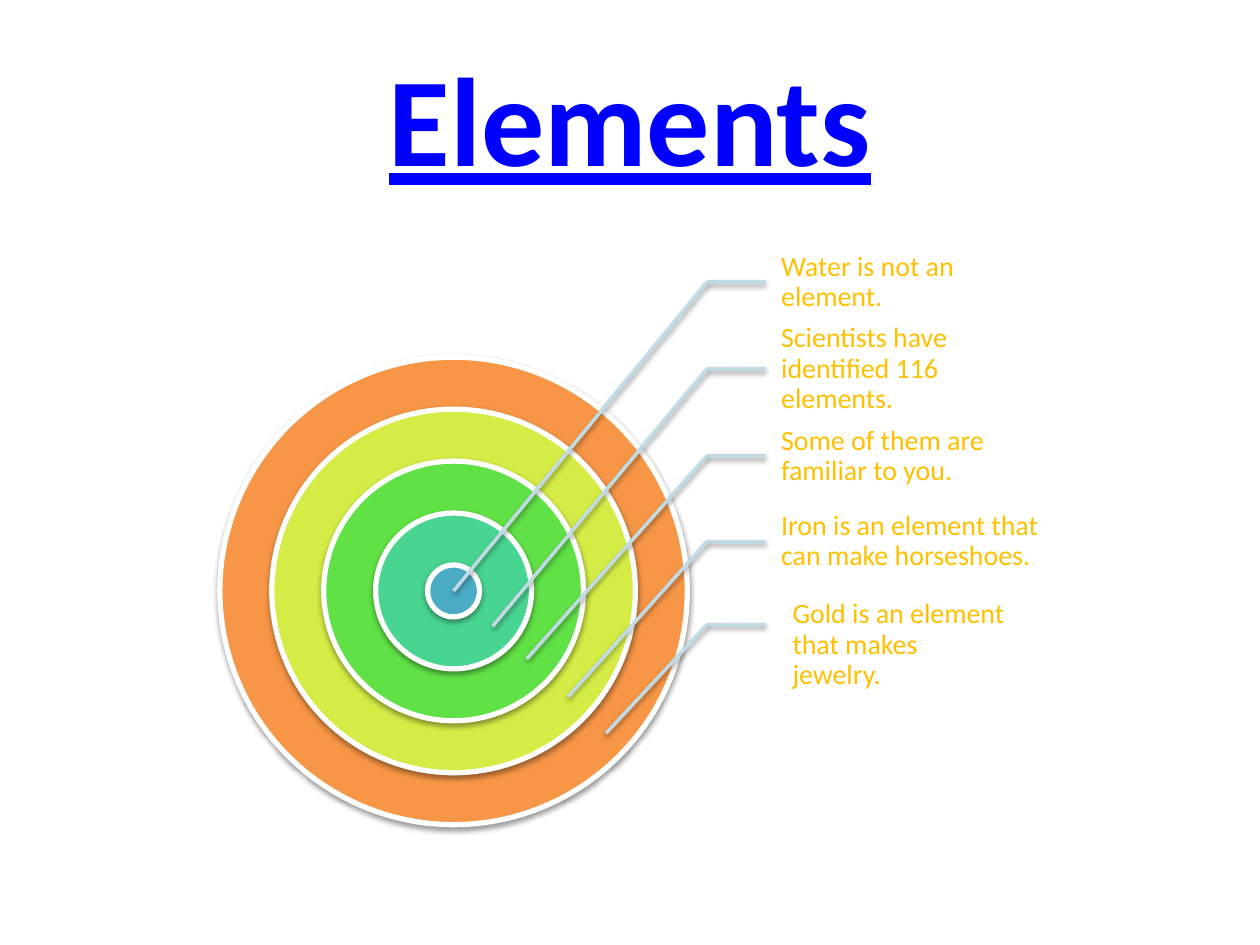
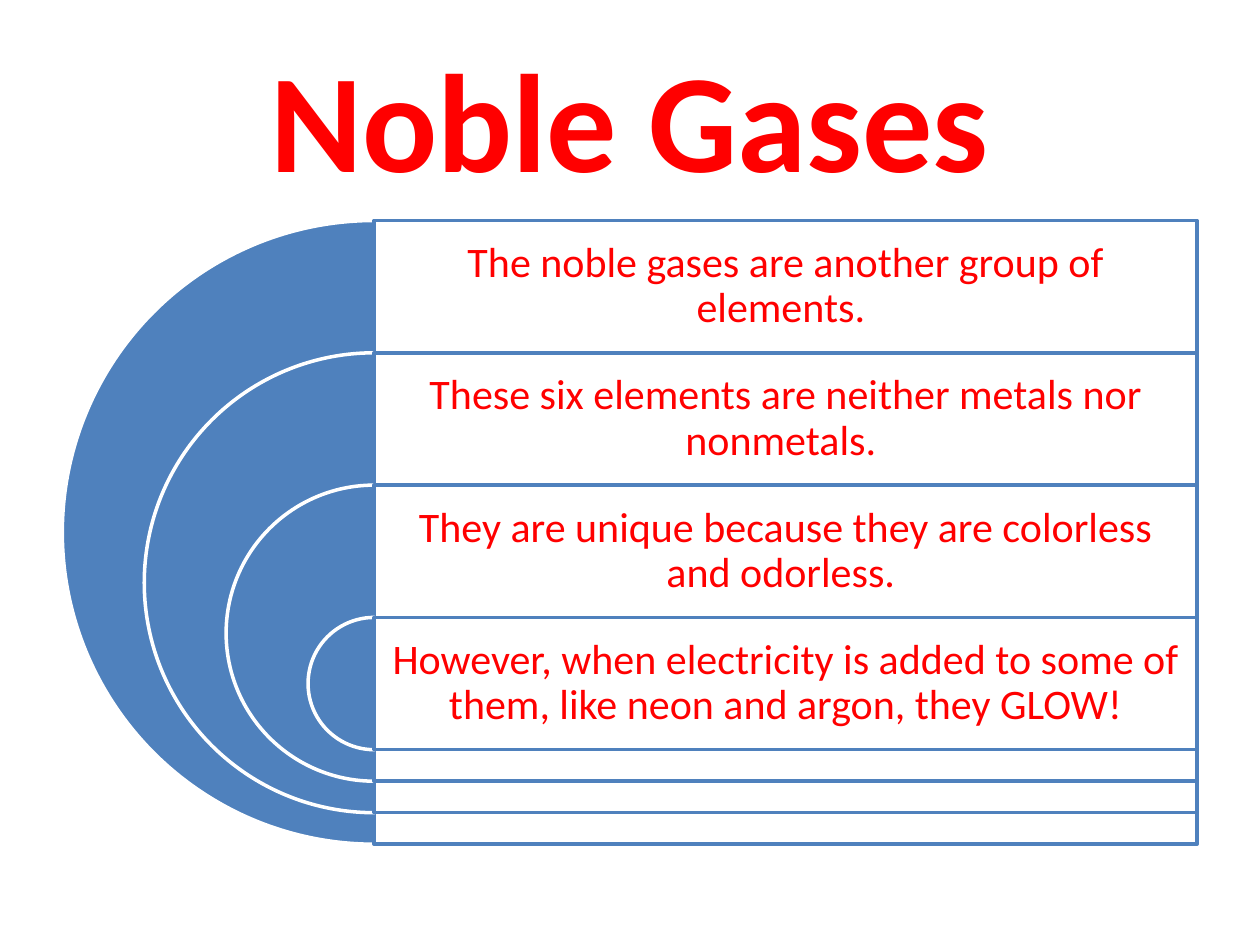
from dataclasses import dataclass

from lxml.etree import SubElement
from pptx import Presentation
from pptx.dml.color import RGBColor
from pptx.enum.shapes import MSO_CONNECTOR, MSO_SHAPE
from pptx.enum.text import MSO_ANCHOR, MSO_AUTO_SIZE, PP_ALIGN
from pptx.oxml.ns import qn
from pptx.util import Inches, Pt

ELEMENTS = [
    {"text": "Water is not an element.", "ring": "F79646",
     "elbow": 2.24, "tip": (3.6, 4.69), "box": (6.08, 1.91, 1.86, 0.66)},
    {"text": "Scientists have identified 116 elements.", "ring": "D5EC46",
     "elbow": 2.93, "tip": (3.91, 4.97), "box": (6.08, 2.6, 1.86, 0.66)},
    {"text": "Some of them are familiar to you.", "ring": "60E146",
     "elbow": 3.62, "tip": (4.18, 5.23), "box": (6.08, 3.29, 1.86, 0.66)},
    {"text": "Iron is an element that can make horseshoes.", "ring": "48D491",
     "elbow": 4.3, "tip": (4.51, 5.53), "box": (6.08, 4, 2.5, 0.6)},
    {"text": "Gold is an element that makes jewelry.", "ring": "4BACC6",
     "elbow": 4.96, "tip": (4.81, 5.82), "box": (6.17, 4.83, 1.86, 0.58)},
]

NOBLE_GASES = [
    "The noble gases are another group of elements. ",
    "These six elements are neither metals nor nonmetals. ",
    "They are unique because they are colorless and odorless. ",
    "However, when electricity is added to some of them, like neon and argon, they GLOW!",
]


@dataclass(frozen=True)
class Theme:
    font: str = "Calibri"
    white: str = "FFFFFF"
    blue: str = "0000FF"
    red: str = "FF0000"
    gold: str = "FFC000"
    leader: str = "C1DBE5"
    arc: str = "4F81BD"
    elements_title: int = 72
    gases_title: int = 80
    label_size: int = 16
    row_size: int = 24
    ring_line: int = 3
    thin_line: int = 2


THEME = Theme()
SLIDE_SIZE = (10, 7.5)
TITLE_BOX = (0.5, 0.3, 9, 1.25)

RING_CENTER = (3.6, 4.69)
RING_DIAMETER = 3.71
LEADER_ELBOW, LEADER_END = 5.61, 6.08
LABEL_INSETS = (0.12, 0.02, 0.02, 0.02)

ARC_CENTER, ARC_TOP, ARC_DIAMETER = 2.97, 1.75, 4.95
ROW_WIDTH, ROW_HEIGHT, ARC_STEP = 6.53, 1.05, 1.3
ROW_INSETS = (0.1, 0.1, 0.1, 0.1)


def inches(values):
    return [Inches(value) for value in values]


def set_shadow(shape, visible):
    effects = SubElement(shape._element.spPr, qn("a:effectLst"))
    if visible:
        shadow = SubElement(effects, qn("a:outerShdw"), blurRad="40000",
                            dist="20000", dir="5400000", rotWithShape="0")
        color = SubElement(shadow, qn("a:srgbClr"), val="000000")
        SubElement(color, qn("a:alpha"), val="38000")


def set_line(shape, color, width):
    shape.line.color.rgb = RGBColor.from_string(color)
    shape.line.width = Pt(width)


def add_shape(slide, kind, box, fill, line, width, shadow=False, opacity=100):
    shape = slide.shapes.add_shape(kind, *inches(box))
    shape.fill.solid()
    shape.fill.fore_color.rgb = RGBColor.from_string(fill)
    if opacity < 100:
        color = shape._element.spPr.find(qn("a:solidFill"))[0]
        SubElement(color, qn("a:alpha"), val=str(opacity * 1000))
    set_line(shape, line, width)
    set_shadow(shape, shadow)
    return shape


def add_leader(slide, start, end):
    connector = slide.shapes.add_connector(
        MSO_CONNECTOR.STRAIGHT, *inches(start + end))
    set_line(connector, THEME.leader, THEME.thin_line)
    set_shadow(connector, True)


def write(frame, text, size, color, align, bold=None, underline=None):
    frame.word_wrap = True
    frame.auto_size = MSO_AUTO_SIZE.NONE
    frame.vertical_anchor = MSO_ANCHOR.MIDDLE
    paragraph = frame.paragraphs[0]
    paragraph.alignment = align
    run = paragraph.add_run()
    run.text = text
    run.font.name = THEME.font
    run.font.size = Pt(size)
    run.font.color.rgb = RGBColor.from_string(color)
    run.font.bold = bold
    run.font.underline = underline
    return paragraph


def add_text(slide, box, insets, text, size, color, align):
    frame = slide.shapes.add_textbox(*inches(box)).text_frame
    (frame.margin_left, frame.margin_top,
     frame.margin_right, frame.margin_bottom) = inches(insets)
    write(frame, text, size, color, align).line_spacing = 0.9


def add_titled_slide(presentation, text, size, color, underline=None):
    slide = presentation.slides.add_slide(presentation.slide_layouts[5])
    title = slide.shapes.title
    title.left, title.top, title.width, title.height = inches(TITLE_BOX)
    write(title.text_frame, text, size, color, PP_ALIGN.CENTER, True, underline)
    return slide


def build_elements(presentation):
    slide = add_titled_slide(presentation, "Elements", THEME.elements_title,
                             THEME.blue, True)
    center_x, center_y = RING_CENTER
    bands = 2 * len(ELEMENTS) - 1
    for index, element in enumerate(ELEMENTS):
        diameter = RING_DIAMETER * (bands - 2 * index) / bands
        box = (center_x - diameter / 2, center_y - diameter / 2, diameter, diameter)
        add_shape(slide, MSO_SHAPE.OVAL, box, element["ring"], THEME.white,
                  THEME.ring_line, shadow=True)
    for element in ELEMENTS:
        add_text(slide, element["box"], LABEL_INSETS, element["text"],
                 THEME.label_size, THEME.gold, PP_ALIGN.LEFT)
        elbow = (LEADER_ELBOW, element["elbow"])
        add_leader(slide, elbow, (LEADER_END, element["elbow"]))
        add_leader(slide, elbow, element["tip"])


def build_noble_gases(presentation):
    slide = add_titled_slide(presentation, "Noble Gases", THEME.gases_title, THEME.red)
    for index, text in enumerate(NOBLE_GASES):
        top = ARC_TOP + index * ROW_HEIGHT
        diameter = ARC_DIAMETER - index * ARC_STEP
        arc = add_shape(slide, MSO_SHAPE.PIE,
                        (ARC_CENTER - diameter / 2, top, diameter, diameter),
                        THEME.arc, THEME.white, THEME.thin_line)
        arc.adjustments[0], arc.adjustments[1] = 54, 162
        add_shape(slide, MSO_SHAPE.RECTANGLE, (ARC_CENTER, top, ROW_WIDTH, diameter),
                  THEME.white, THEME.arc, THEME.thin_line, opacity=90)
        add_text(slide, (ARC_CENTER, top, ROW_WIDTH, ROW_HEIGHT), ROW_INSETS, text,
                 THEME.row_size, THEME.red, PP_ALIGN.CENTER)


def main():
    presentation = Presentation()
    presentation.slide_width, presentation.slide_height = inches(SLIDE_SIZE)
    build_elements(presentation)
    build_noble_gases(presentation)
    presentation.save("out.pptx")


if __name__ == "__main__":
    main()
